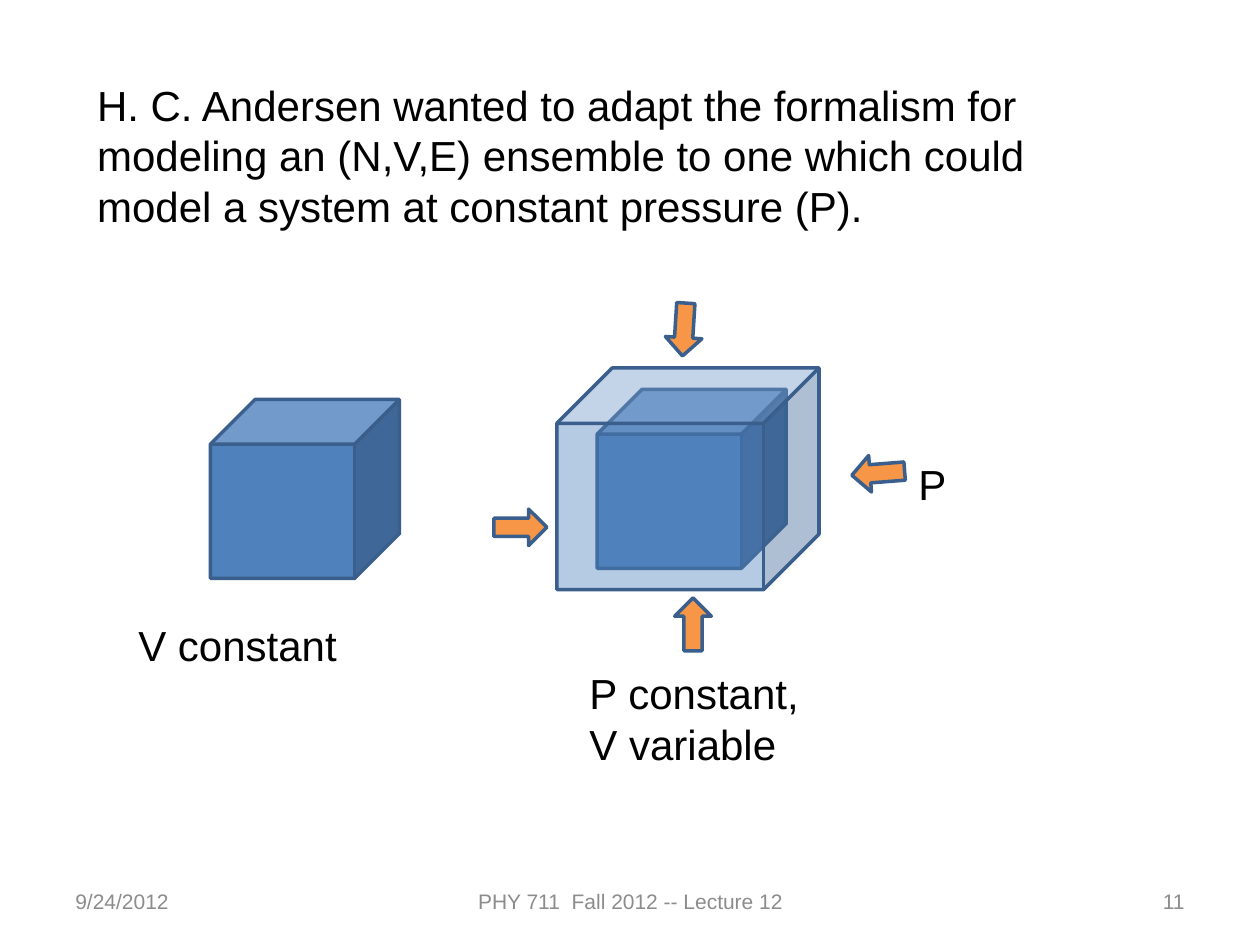
"""Build the slide on modeling a system at constant pressure."""
import pptx
import pptx.util
import pptx.dml.color
import pptx.enum.shapes
import pptx.enum.text
import lxml.etree

Inches = pptx.util.Inches
RGBColor = pptx.dml.color.RGBColor
SHAPE = pptx.enum.shapes.MSO_SHAPE
ALIGN = pptx.enum.text.PP_ALIGN
ANCHOR = pptx.enum.text.MSO_ANCHOR

BLACK = RGBColor(0, 0, 0)
GRAY = RGBColor(0x8C, 0x8C, 0x8C)
BLUE = RGBColor(0x4F, 0x81, 0xBD)
NAVY = RGBColor(0x3A, 0x5F, 0x8C)
ORANGE = RGBColor(0xF7, 0x96, 0x46)

TITLE = (
    "H. C. Andersen wanted to adapt the formalism for modeling an (N,V,E) "
    "ensemble to one which could model a system at constant pressure (P)."
)
LABELS = [
    ("V constant", (1, 4.87, 2.17, 0.5)),
    ("P", (7.19, 3.59, 1.4, 0.5)),
    ("P constant, V variable", (4.58, 5.25, 2.15, 0.91)),
]
FOOTERS = [
    ("9/24/2012", 0.5, 2.33, ALIGN.LEFT),
    ("PHY 711  Fall 2012 -- Lecture 12", 3.42, 3.17, ALIGN.CENTER),
    ("11", 7.17, 2.33, ALIGN.RIGHT),
]
CUBES = [
    ((1.67, 3.17, 1.5, 1.42), None),
    ((4.74, 3.09, 1.5, 1.42), None),
    ((4.42, 2.92, 2.08, 1.76), 42),
]
ARROWS = [(5.22, 2.47, 93.6), (3.92, 4.04, 0), (5.29, 4.81, 270), (6.76, 3.61, 175.5)]
ARROW_SIZE = (0.42, 0.29)


def write(slide, text, box, size=24, color=BLACK, align=ALIGN.LEFT, anchor=ANCHOR.TOP, holder=None):
    area = [Inches(n) for n in box]
    item = holder or slide.shapes.add_textbox(*area)
    item.left, item.top, item.width, item.height = area
    frame = item.text_frame
    frame.text = text
    frame.word_wrap = True
    frame.auto_size = pptx.enum.text.MSO_AUTO_SIZE.NONE
    frame.vertical_anchor = anchor
    line = frame.paragraphs[0]
    line.alignment = align
    font = line.runs[0].font
    font.name, font.size = "Arial", pptx.util.Pt(size)
    font.color.rgb = color


def draw(slide, kind, box, fill, turn=0, alpha=None):
    item = slide.shapes.add_shape(kind, *[Inches(n) for n in box])
    item.shadow.inherit = False
    item.rotation = turn
    item.fill.solid()
    item.fill.fore_color.rgb = fill
    item.line.color.rgb = NAVY
    item.line.width = pptx.util.Pt(2)
    if alpha is not None:
        tone = item.fill._xPr.find(".//" + pptx.oxml.ns.qn("a:srgbClr"))
        lxml.etree.SubElement(tone, pptx.oxml.ns.qn("a:alpha"), val=str(alpha * 1000))


def main():
    deck = pptx.Presentation()
    deck.slide_width, deck.slide_height = Inches(10), Inches(7.5)
    slide = deck.slides.add_slide(deck.slide_layouts[5])
    write(slide, TITLE, (0.67, 0.58, 8.17, 1.31), holder=slide.shapes.title)
    for text, left, width, align in FOOTERS:
        write(slide, text, (left, 6.95, width, 0.4), size=12, color=GRAY,
              align=align, anchor=ANCHOR.MIDDLE)
    for box, alpha in CUBES:
        draw(slide, SHAPE.CUBE, box, BLUE, alpha=alpha)
    for left, top, turn in ARROWS:
        draw(slide, SHAPE.RIGHT_ARROW, (left, top, *ARROW_SIZE), ORANGE, turn=turn)
    for text, box in LABELS:
        write(slide, text, box)
    deck.save("out.pptx")


if __name__ == "__main__":
    main()
